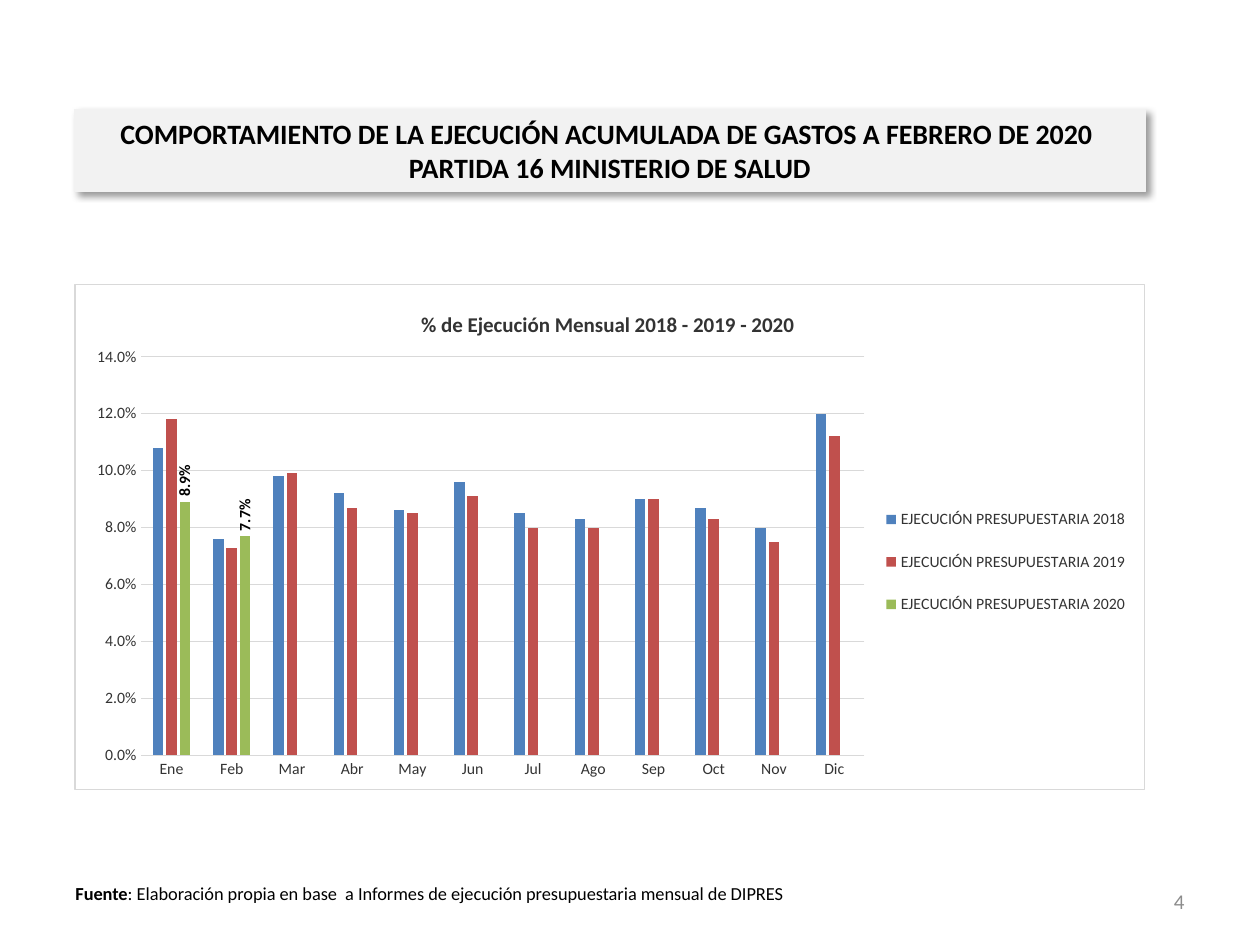
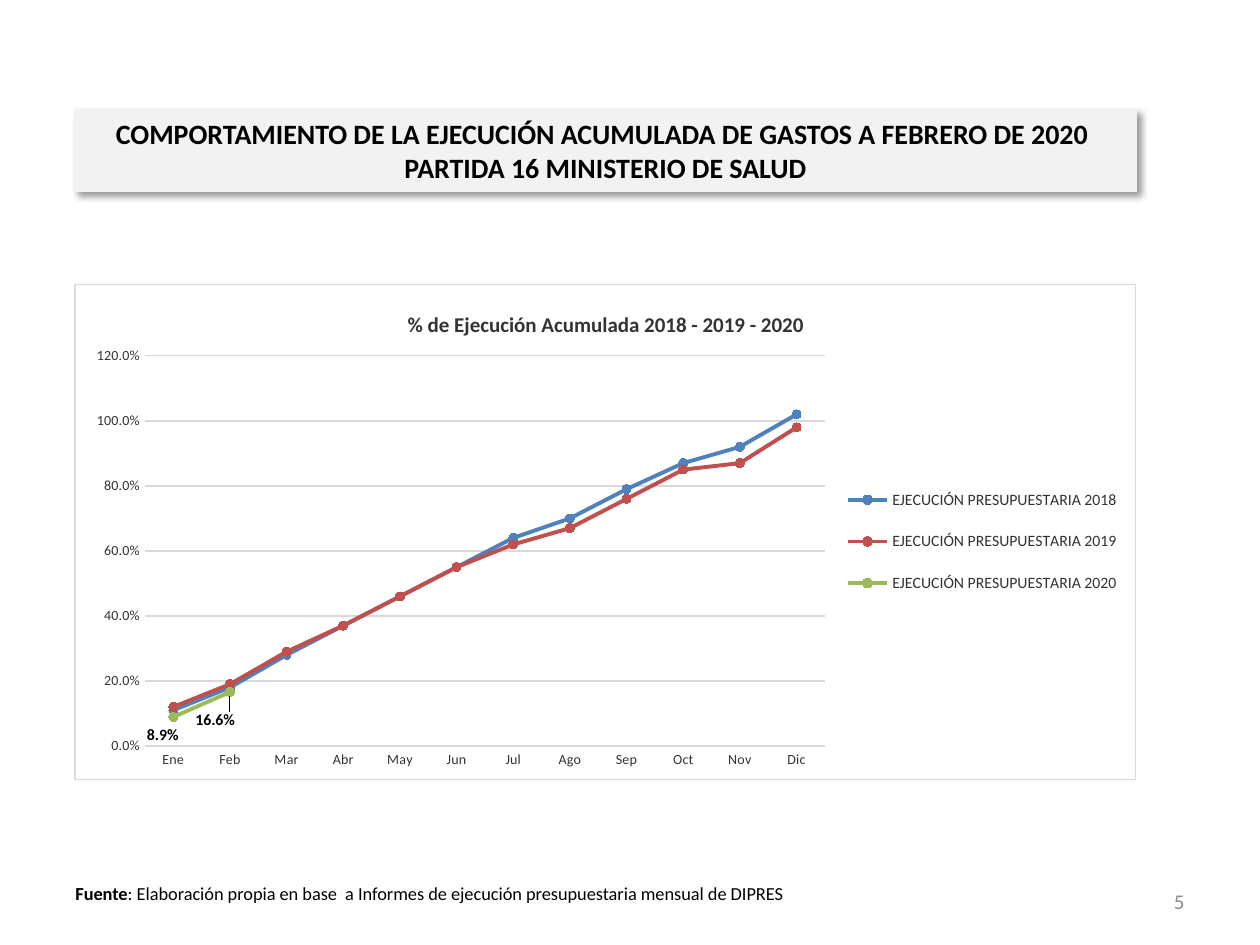
from dataclasses import dataclass

from lxml.etree import SubElement
from pptx import Presentation
from pptx.chart.data import CategoryChartData
from pptx.dml.color import RGBColor
from pptx.enum.chart import XL_CHART_TYPE, XL_LABEL_POSITION, XL_LEGEND_POSITION, XL_MARKER_STYLE, XL_TICK_MARK
from pptx.enum.text import MSO_ANCHOR, MSO_AUTO_SIZE, PP_ALIGN
from pptx.oxml import parse_xml
from pptx.oxml.ns import nsdecls, qn
from pptx.util import Inches, Pt

FONT = "Calibri"
BLACK = RGBColor(0x00, 0x00, 0x00)
DARK_GRAY = RGBColor(0x33, 0x33, 0x33)
PAGE_GRAY = RGBColor(0x8C, 0x8C, 0x8C)
GRID_GRAY = RGBColor(0xD9, 0xD9, 0xD9)
BAND_GRAY = RGBColor(0xF2, 0xF2, 0xF2)
BLUE = RGBColor(0x4F, 0x81, 0xBD)
RED = RGBColor(0xC0, 0x50, 0x4D)
GREEN = RGBColor(0x9B, 0xBB, 0x59)
YEAR_COLORS = {2018: BLUE, 2019: RED, 2020: GREEN}

LEFT = 0.59
PERCENT = "0.0%"
MONTHS = ["Ene", "Feb", "Mar", "Abr", "May", "Jun", "Jul", "Ago", "Sep", "Oct", "Nov", "Dic"]
TITLE_LINES = [
    "COMPORTAMIENTO DE LA EJECUCIÓN ACUMULADA DE GASTOS A FEBRERO DE 2020 ",
    "PARTIDA 16 MINISTERIO DE SALUD",
]
MONTHLY = [
    [0.108, 0.076, 0.098, 0.092, 0.086, 0.096, 0.085, 0.083, 0.09, 0.087, 0.08, 0.12],
    [0.118, 0.073, 0.099, 0.087, 0.085, 0.091, 0.08, 0.08, 0.09, 0.083, 0.075, 0.112],
    [0.089, 0.077],
]
ACCUMULATED = [
    [0.11, 0.18, 0.28, 0.37, 0.46, 0.55, 0.64, 0.7, 0.79, 0.87, 0.92, 1.02],
    [0.12, 0.19, 0.29, 0.37, 0.46, 0.55, 0.62, 0.67, 0.76, 0.85, 0.87, 0.98],
    [0.089, 0.166],
]


@dataclass
class ChartStyle:
    kind: XL_CHART_TYPE
    title: str
    axis_size: int
    maximum: float
    step: float
    title_place: dict
    plot_place: dict
    legend_place: dict


MONTHLY_STYLE = ChartStyle(
    XL_CHART_TYPE.COLUMN_CLUSTERED, "% de Ejecución Mensual 2018 - 2019 - 2020 ", 9, 0.14, 0.02,
    dict(x=0.32, y=0.045), dict(x=0.062, y=0.144, w=0.676, h=0.789), dict(x=0.75, y=0.4, w=0.24, h=0.3))
ACCUMULATED_STYLE = ChartStyle(
    XL_CHART_TYPE.LINE_MARKERS, "% de Ejecución Acumulada 2018 - 2019 - 2020 ", 8, 1.2, 0.2,
    dict(x=0.31, y=0.045), dict(x=0.066, y=0.145, w=0.641, h=0.788), dict(x=0.72, y=0.37, w=0.27, h=0.3))


def set_font(font, size, color, bold=False):
    font.name = FONT
    font.size = Pt(size)
    font.bold = bold
    font.color.rgb = color


def add_run(paragraph, text, size, color, bold=False):
    run = paragraph.add_run()
    run.text = text
    set_font(run.font, size, color, bold)


def set_line(line, color, width=0.75):
    line.color.rgb = color
    line.width = Pt(width)


def place_shape(shape, left, top, width, height):
    shape.left, shape.top = Inches(left), Inches(top)
    shape.width, shape.height = Inches(width), Inches(height)


def place_chart_part(part, index, place, inner=False):
    for old_layout in part.findall(qn("c:layout")):
        part.remove(old_layout)
    layout = parse_xml(f'<c:layout {nsdecls("c")}><c:manualLayout/></c:layout>')
    manual = layout[0]
    if inner:
        SubElement(manual, qn("c:layoutTarget")).set("val", "inner")
    if part.tag != qn("c:dLbl"):
        for mode in ("xMode", "yMode"):
            SubElement(manual, qn(f"c:{mode}")).set("val", "edge")
    for name, value in place.items():
        SubElement(manual, qn(f"c:{name}")).set("val", str(value))
    part.insert(index, layout)


def format_title(slide, width):
    title = slide.shapes.title
    place_shape(title, LEFT, 0.87, width, 0.65)
    title.fill.solid()
    title.fill.fore_color.rgb = BAND_GRAY
    set_line(title.line, BAND_GRAY)
    title.element.spPr.append(parse_xml(
        f'<a:effectLst {nsdecls("a")}><a:outerShdw blurRad="50800" dist="38100" dir="2700000" '
        'algn="tl" rotWithShape="0"><a:srgbClr val="000000"><a:alpha val="40000"/>'
        '</a:srgbClr></a:outerShdw></a:effectLst>'))
    frame = title.text_frame
    frame.auto_size = MSO_AUTO_SIZE.NONE
    frame.word_wrap = True
    frame.vertical_anchor = MSO_ANCHOR.MIDDLE
    frame.margin_left = frame.margin_right = Inches(0.11)
    frame.margin_top = frame.margin_bottom = Inches(0.05)
    paragraph = frame.paragraphs[0]
    paragraph.alignment = PP_ALIGN.CENTER
    first, second = TITLE_LINES
    add_run(paragraph, first, 16, BLACK, True)
    paragraph.add_line_break()
    add_run(paragraph, second, 16, BLACK, True)


def add_footer(slide, page):
    source = slide.shapes.add_textbox(Inches(0.5), Inches(6.95), Inches(5.91), Inches(0.28))
    source.text_frame.word_wrap = True
    paragraph = source.text_frame.paragraphs[0]
    add_run(paragraph, "Fuente", 10.5, BLACK, True)
    add_run(paragraph, ": Elaboración propia en base  a Informes de ejecución presupuestaria "
            "mensual de DIPRES", 10.5, BLACK)
    number = slide.shapes.add_textbox(Inches(7.17), Inches(6.95), Inches(2.33), Inches(0.4))
    number.text_frame.word_wrap = True
    number.text_frame.vertical_anchor = MSO_ANCHOR.MIDDLE
    paragraph = number.text_frame.paragraphs[0]
    paragraph.alignment = PP_ALIGN.RIGHT
    add_run(paragraph, str(page), 12, PAGE_GRAY)


def format_axes(chart, style):
    for axis in (chart.category_axis, chart.value_axis):
        axis.major_tick_mark = axis.minor_tick_mark = XL_TICK_MARK.NONE
        set_font(axis.tick_labels.font, style.axis_size, DARK_GRAY)
    set_line(chart.category_axis.format.line, GRID_GRAY)
    value_axis = chart.value_axis
    value_axis.minimum_scale, value_axis.maximum_scale = 0, style.maximum
    value_axis.major_unit = style.step
    value_axis.tick_labels.number_format = PERCENT
    value_axis.tick_labels.number_format_is_linked = False
    value_axis.format.line.fill.background()
    value_axis.has_major_gridlines = True
    set_line(value_axis.major_gridlines.format.line, GRID_GRAY)


def add_execution_chart(slide, box, style, rows):
    data = CategoryChartData(number_format=PERCENT)
    data.categories = MONTHS
    for year, values in zip(YEAR_COLORS, rows):
        data.add_series(f"EJECUCIÓN PRESUPUESTARIA {year}", values + [None] * (len(MONTHS) - len(values)))
    chart = slide.shapes.add_chart(style.kind, *map(Inches, box), data).chart
    set_font(chart.font, 10, BLACK)
    chart.element.find(qn("c:chart")).addnext(parse_xml(
        f'<c:spPr {nsdecls("c", "a")}><a:solidFill><a:srgbClr val="FFFFFF"/></a:solidFill>'
        f'<a:ln w="9525"><a:solidFill><a:srgbClr val="{GRID_GRAY}"/></a:solidFill></a:ln></c:spPr>'))
    chart.has_title = True
    add_run(chart.chart_title.text_frame.paragraphs[0], style.title, 12, DARK_GRAY, True)
    chart.has_legend = True
    chart.legend.position = XL_LEGEND_POSITION.RIGHT
    chart.legend.include_in_layout = False
    set_font(chart.legend.font, 9, DARK_GRAY)
    format_axes(chart, style)
    root = chart.element.find(qn("c:chart"))
    place_chart_part(root.find(qn("c:title")), 1, style.title_place)
    place_chart_part(root.find(qn("c:plotArea")), 0, style.plot_place, inner=True)
    place_chart_part(root.find(qn("c:legend")), 1, style.legend_place)
    chart.plots[0].vary_by_categories = False
    return chart


def label_series(series, position):
    labels = series.data_labels
    labels.show_value = True
    labels.number_format = PERCENT
    labels.number_format_is_linked = False
    labels.position = position
    set_font(labels.font, 9, BLACK, True)


def add_monthly_columns(slide, box):
    chart = add_execution_chart(slide, box, MONTHLY_STYLE, MONTHLY)
    plot = chart.plots[0]
    plot.gap_width, plot.overlap = 219, -27
    for series, color in zip(plot.series, YEAR_COLORS.values()):
        series.format.fill.solid()
        series.format.fill.fore_color.rgb = color
    label_series(plot.series[-1], XL_LABEL_POSITION.OUTSIDE_END)
    for body in chart.element.xpath(".//c:ser/c:dLbls/c:txPr/a:bodyPr"):
        body.set("rot", "-5400000")
        body.set("vert", "horz")


def add_accumulated_lines(slide, box):
    chart = add_execution_chart(slide, box, ACCUMULATED_STYLE, ACCUMULATED)
    for series, color in zip(chart.plots[0].series, YEAR_COLORS.values()):
        series.smooth = False
        set_line(series.format.line, color, 2.25)
        series.marker.style = XL_MARKER_STYLE.CIRCLE
        series.marker.size = 5
        series.marker.format.fill.solid()
        series.marker.format.fill.fore_color.rgb = color
        set_line(series.marker.format.line, color)
    current_year = chart.plots[0].series[-1]
    label_series(current_year, XL_LABEL_POSITION.BELOW)
    for index in range(2):
        label = current_year.points[index].data_label
        set_font(label.font, 9, BLACK, True)
        label.position = XL_LABEL_POSITION.BELOW
    offsets = [dict(x=-0.01, y=0), dict(x=-0.014, y=0.02)]
    for label, offset in zip(chart.element.xpath(".//c:dLbl"), offsets):
        place_chart_part(label, 1, offset)


def add_chart_slide(presentation, page, width, height, add_chart_region):
    slide = presentation.slides.add_slide(presentation.slide_layouts[5])
    add_footer(slide, page)
    format_title(slide, width)
    add_chart_region(slide, (LEFT, 2.25, width, height))


def main():
    presentation = Presentation()
    presentation.slide_width, presentation.slide_height = Inches(10), Inches(7.5)
    add_chart_slide(presentation, 4, 8.5, 4.02, add_monthly_columns)
    add_chart_slide(presentation, 5, 8.43, 3.94, add_accumulated_lines)
    presentation.save("out.pptx")


if __name__ == "__main__":
    main()
